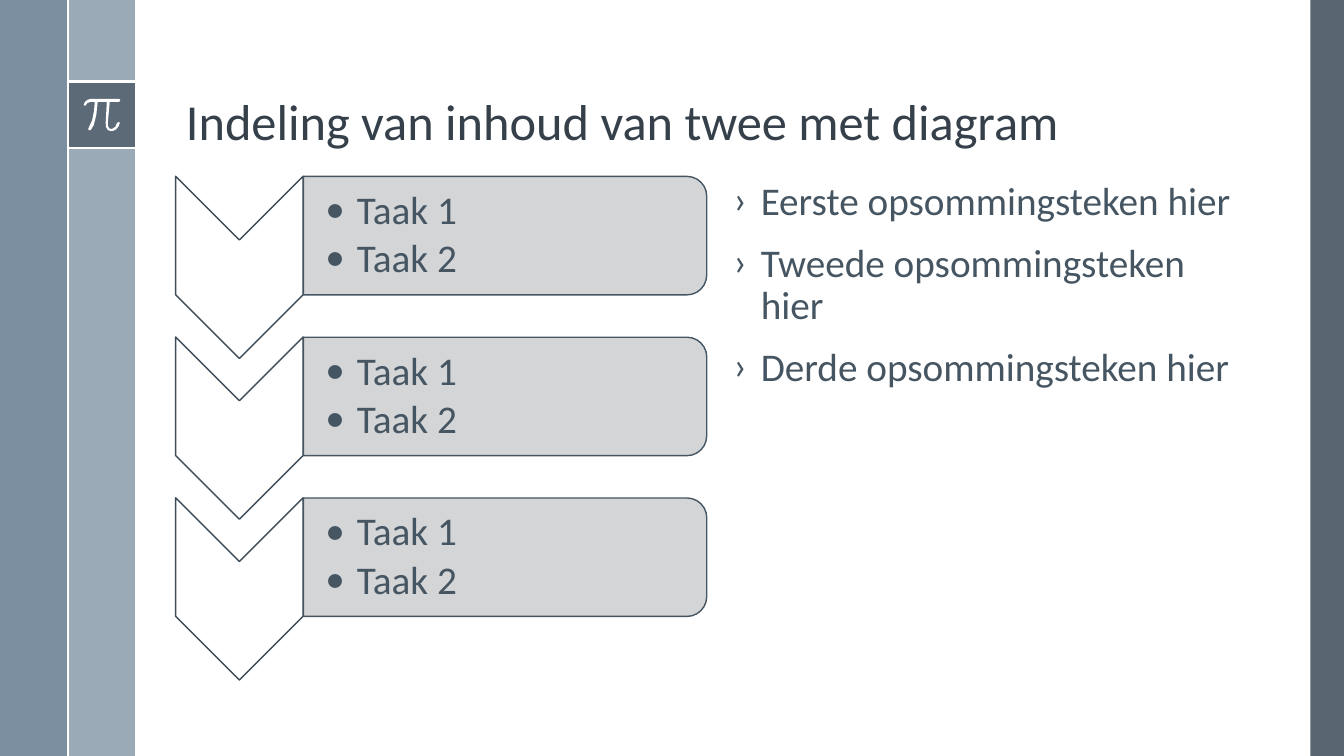
import pptx
import pptx.util
import pptx.dml.color
import pptx.enum.shapes
import pptx.enum.text
import pptx.oxml
import pptx.oxml.ns

Pt = pptx.util.Pt
SHAPE = pptx.enum.shapes.MSO_SHAPE
ANCHOR = pptx.enum.text.MSO_ANCHOR
NS = pptx.oxml.ns.nsdecls("a")
SLATE = "465562"
rgb = pptx.dml.color.RGBColor.from_string


def paint(sp, fill, opacity=100, line=None):
    """Fill a shape, opacity in percent, with an optional 1 pt outline."""
    sp.shadow.inherit = False
    sp.fill.solid()
    sp.fill.fore_color.rgb = rgb(fill)
    if opacity < 100:
        color = sp._element.spPr.find(pptx.oxml.ns.qn("a:solidFill"))[0]
        color.append(pptx.oxml.parse_xml(f'<a:alpha {NS} val="{opacity * 1000}"/>'))
    if line:
        sp.line.color.rgb = rgb(line)
        sp.line.width = Pt(1)
    else:
        sp.line.fill.background()


def write(tf, lines, size, color, bullet=None, indent=0, before=0, after=0):
    """Write one paragraph per line, with a hanging bullet if one is given."""
    tf.word_wrap = True
    tf.auto_size = pptx.enum.text.MSO_AUTO_SIZE.NONE
    for i, text in enumerate(lines):
        p = tf.add_paragraph() if i else tf.paragraphs[0]
        p.alignment = pptx.enum.text.PP_ALIGN.LEFT
        p.line_spacing = 0.9
        p.space_before, p.space_after = Pt(before), Pt(after)
        r = p.add_run()
        r.text = text
        r.font.name, r.font.size = "Calibri", Pt(size)
        r.font.color.rgb = rgb(color)
        if bullet:
            pPr = p._p.get_or_add_pPr()
            pPr.set("marL", str(Pt(indent)))
            pPr.set("indent", str(-Pt(indent)))
            pPr.append(pptx.oxml.parse_xml(f'<a:buFont {NS} typeface="Calibri"/>'))
            pPr.append(pptx.oxml.parse_xml(f'<a:buChar {NS} char="{bullet}"/>'))


prs = pptx.Presentation()
prs.slide_width, prs.slide_height = Pt(960), Pt(540)
s = prs.slides.add_slide(prs.slide_layouts[5])

# Side bands and the symbol tile
for x, y, w, h, fill, opacity in [
    (936, 0, 24, 540, "475562", 90),
    (48, 0, 48.4, 540, "9BAAB7", 100),
    (0, 0, 48, 540, "6A8093", 88),
    (48, 58.2, 48.4, 47.8, "475562", 75),
]:
    band = s.shapes.add_shape(SHAPE.RECTANGLE, Pt(x), Pt(y), Pt(w), Pt(h))
    paint(band, fill, opacity)

for x1, y1, x2, y2 in [(48, 58.2, 96.4, 58.2), (48, 106, 96.4, 106), (48.4, 0, 48.4, 540)]:
    rule = s.shapes.add_connector(
        pptx.enum.shapes.MSO_CONNECTOR.STRAIGHT, Pt(x1), Pt(y1), Pt(x2), Pt(y2))
    rule.line.color.rgb = rgb("FFFFFF")
    rule.line.width = Pt(1.5)
    rule._element.spPr.append(pptx.oxml.parse_xml(f"<a:effectLst {NS}/>"))

pi_points = [
    (85, 70.6), (64.8, 70.6), (62.4, 71.3), (60.6, 72.9), (59.8, 74.9), (60.2, 75.5),
    (61, 75.5), (62.4, 73.6), (64.8, 72.7), (67.7, 72.7), (67.2, 79), (65.8, 86),
    (63.2, 91.6), (63.2, 92.7), (64, 93.1), (64.8, 92.9), (67, 89.4), (68.8, 82),
    (69.8, 72.7), (76.3, 72.7), (75.5, 87.8), (75.7, 90.6), (77, 92.9), (79.2, 93.6),
    (80.8, 93.5), (83, 92.4), (84.8, 90), (85.6, 87.8), (85, 87.1), (83.6, 87.8),
    (82.4, 90.6), (80, 92.1), (78.2, 91.8), (77.2, 90.2), (77, 87.8), (78.4, 72.7),
    (85, 72.7), (85.8, 72), (85.7, 71),
]
outline = s.shapes.build_freeform(*[Pt(v) for v in pi_points[0]])
outline.add_line_segments([(Pt(x), Pt(y)) for x, y in pi_points[1:]], close=True)
paint(outline.convert_to_shape(), "FFFFFF")

title = s.shapes.title
title.left, title.top, title.width, title.height = Pt(125.6), Pt(13.7), Pt(770.4), Pt(98)
title.text_frame.vertical_anchor = ANCHOR.BOTTOM
write(title.text_frame, ["Indeling van inhoud van twee met diagram"], 36, "35404A")

# Three steps: a downward chevron beside a task panel
for step in range(3):
    top = step * 114.85
    chevron = s.shapes.add_shape(SHAPE.CHEVRON, Pt(105.9), Pt(145.4 + top), Pt(130.2), Pt(91.1))
    paint(chevron, "FFFFFF", line="404D59")
    panel = s.shapes.add_shape(
        SHAPE.ROUND_2_SAME_RECTANGLE, Pt(318.5), Pt(24.3 + top), Pt(84.6), Pt(288))
    paint(panel, "CFD1D3", 90, SLATE)
    chevron.rotation = panel.rotation = 90

    tasks = s.shapes.add_textbox(Pt(216.7), Pt(130.2 + top), Pt(283.7), Pt(76.4))
    tf = tasks.text_frame
    tf.vertical_anchor = ANCHOR.MIDDLE
    tf.margin_left = Pt(15.8)
    tf.margin_top = tf.margin_right = tf.margin_bottom = Pt(1.4)
    write(tf, ["Taak 1", "Taak 2"], 28, SLATE, "•", 22.5, after=4.2)

body = s.shapes.add_textbox(Pt(517), Pt(126), Pt(379.4), Pt(360))
write(body.text_frame,
      ["Eerste opsommingsteken hier", "Tweede opsommingsteken hier", "Derde opsommingsteken hier"],
      28, SLATE, "›", 19.4, before=14)

prs.save("out.pptx")
